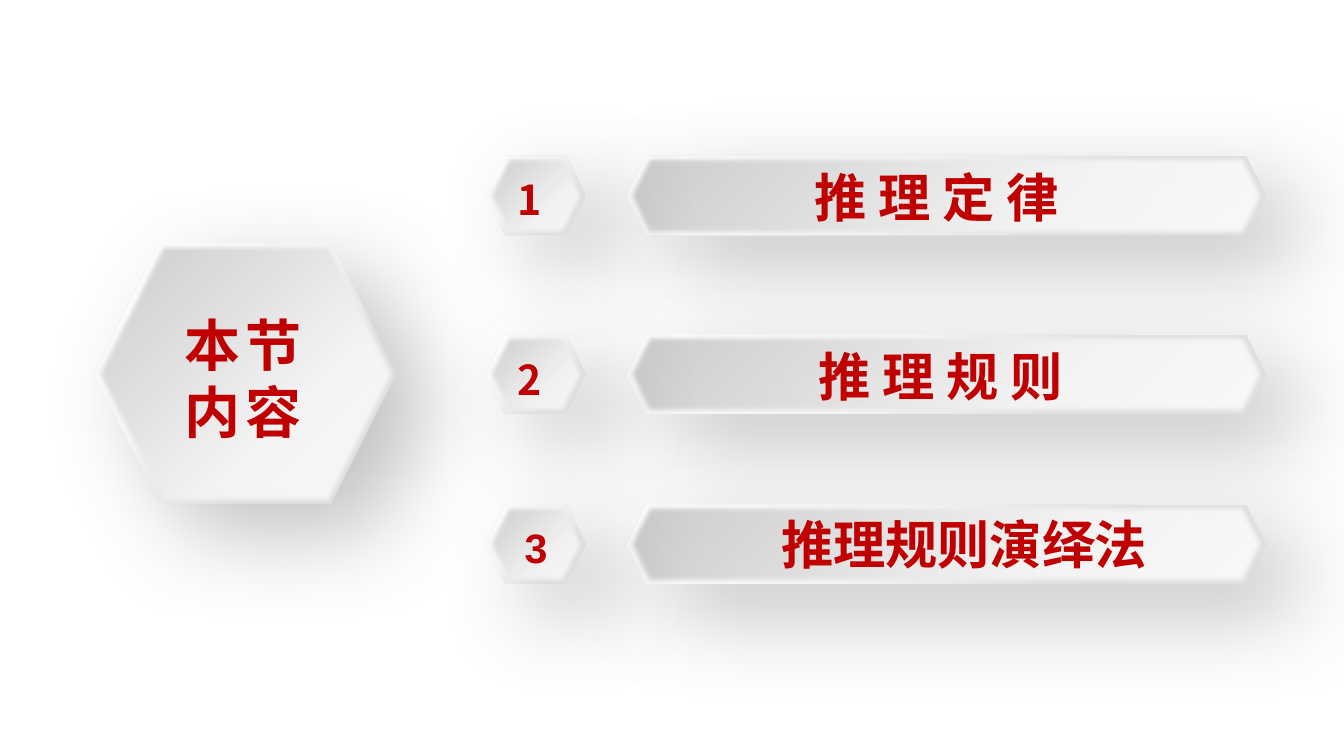
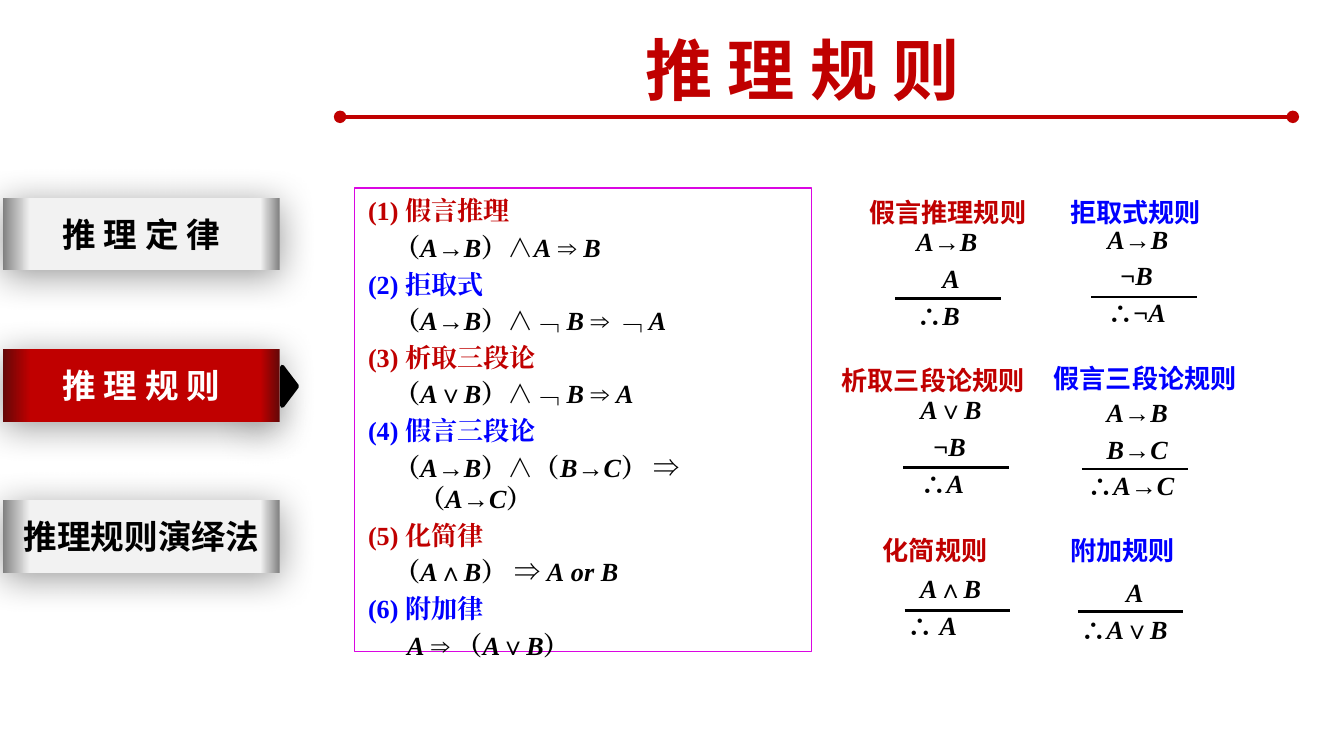
"""Build two slides on inference rules: a section overview and the rules themselves."""
import itertools

import lxml.etree
import pptx
import pptx.dml.color
import pptx.enum.shapes
import pptx.enum.text
import pptx.oxml.ns
import pptx.util

Pt = pptx.util.Pt
RGB = pptx.dml.color.RGBColor.from_string
SHAPE = pptx.enum.shapes.MSO_SHAPE
ANCHOR = pptx.enum.text.MSO_ANCHOR
ALIGN = pptx.enum.text.PP_ALIGN
FIT = pptx.enum.text.MSO_AUTO_SIZE.SHAPE_TO_FIT_TEXT
STRAIGHT = pptx.enum.shapes.MSO_CONNECTOR.STRAIGHT
qn = pptx.oxml.ns.qn
Sub = lxml.etree.SubElement

COLORS = {
    "red": "C00000", "blue": "0000FF", "black": "000000", "white": "FFFFFF",
    "purple": "DA06E2", "hexagon shadow": "696969",
}
RIM = [(1, "DEDEDE"), (30, "E0E0E0"), (61, "F6F6F6"), (100, "FFFFFF")]
FACE = [(0, "CBCBCB"), (32, "DEDEDE"), (64, "F3F3F3"), (100, "F9F9F9")]
GREY_TAB = [(0, "808080"), (7, "F2F2F2"), (90, "F2F2F2"), (100, "808080")]
RED_TAB = [(0, "630808"), (7, "C00000"), (90, "C00000"), (100, "630808")]
SANS, SERIF = "Noto Sans CJK SC", "Times New Roman"
TOPICS = ["推 理 定 律", "推 理 规 则", "推理规则演绎法"]


def format_runs(paragraph, size, color, font=SANS):
    """Make every run bold in one size, colour and font."""
    for run in paragraph.runs:
        run.font.size, run.font.bold, run.font.name = Pt(size), True, font
        run.font.color.rgb = RGB(COLORS[color])
        Sub(run.font._element, qn("a:ea")).set("typeface", font)


def paint(shape, stops, angle, shadow=None, soft_edge=0):
    """Give a shape a gradient, no outline, and an optional shadow or soft edge."""
    shape.line.fill.background()
    shape.shadow.inherit = False
    if stops:
        shape.fill.gradient()
        shape.fill.gradient_angle = 360 - angle
        stop_list = shape._element.spPr.find(qn("a:gradFill")).find(qn("a:gsLst"))
        stop_list.clear()
        for position, color in stops:
            stop = Sub(stop_list, qn("a:gs"), pos=str(position * 1000))
            Sub(stop, qn("a:srgbClr"), val=color)
    effects = shape._element.spPr.find(qn("a:effectLst"))
    if shadow:
        color, blur, distance, direction = shadow
        outer = Sub(effects, qn("a:outerShdw"), blurRad=str(Pt(blur)), dist=str(Pt(distance)),
                    dir=str(direction * 60000), algn="ctr", rotWithShape="0")
        tint = Sub(outer, qn("a:srgbClr"), val=COLORS[color])
        Sub(tint, qn("a:alpha"), val="40000")
    if soft_edge:
        Sub(effects, qn("a:softEdge"), rad=str(Pt(soft_edge)))


deck = pptx.Presentation()
deck.slide_width, deck.slide_height = Pt(720), Pt(405)
title_only = deck.slide_layouts[5]
overview = deck.slides.add_slide(title_only)
rules = deck.slides.add_slide(title_only)

row_tops = [83.5, 179.3, 270.4]
hexagons = [(50.4, 130.3, 162, 139.7)]
for top in row_tops:
    hexagons += [(335.5, top, 342.7, 42.5), (260, top, 54, 42.5)]
for box in hexagons:
    rim = overview.shapes.add_shape(SHAPE.HEXAGON, *map(Pt, box))
    paint(rim, RIM, 225, ("hexagon shadow", 49, 25, 40))
    face = overview.shapes.add_shape(SHAPE.HEXAGON, *map(Pt, box))
    paint(face, FACE, 45, soft_edge=2.5)

overview_labels = [
    (TOPICS[0], 436.3, 88.6, 175.7, 28, SANS),
    (TOPICS[1], 438.5, 184.3, 155.5, 28, SANS),
    (TOPICS[2], 418.5, 274.3, 200, 28, SANS),
    ("1", 277, 93.6, 34, 22, SANS),
    ("2", 277, 190, 34, 22, SANS),
    ("3", 281, 280, 34, 22, "Arial"),
]
for text, left, top, width, size, font in overview_labels:
    frame = overview.shapes.add_textbox(Pt(left), Pt(top), Pt(width), Pt(size * 1.2)).text_frame
    frame.margin_left = frame.margin_top = frame.margin_right = frame.margin_bottom = 0
    frame.word_wrap, frame.auto_size = True, FIT
    frame.text = text
    format_runs(frame.paragraphs[0], size, "red", font)

headings = [
    (overview, "本节\n内容", (91.4, 162.7, 81.4, 79.9), 30),
    (rules, TOPICS[1], (338.4, 11.5, 237.6, 51.1), 36),
]
for slide, text, box, size in headings:
    title = slide.shapes.title
    title.left, title.top, title.width, title.height = map(Pt, box)
    frame = title.text_frame
    frame.text = text
    frame.vertical_anchor, frame.auto_size = ANCHOR.TOP, FIT
    frame.word_wrap = slide is rules
    for paragraph in frame.paragraphs:
        paragraph.alignment = ALIGN.LEFT
        format_runs(paragraph, size, "red")
        if slide is overview:
            paragraph.runs[0].font._element.set("spc", "300")
    slide.shapes._spTree.append(title._element)

pointer = rules.shapes.add_shape(SHAPE.ISOSCELES_TRIANGLE, Pt(144.7), Pt(203), Pt(20.9), Pt(7.9))
pointer.rotation = 90
paint(pointer, None, 0, ("black", 22, 20, 135))
pointer.fill.solid()
pointer.fill.fore_color.rgb = pointer.line.color.rgb = RGB(COLORS["black"])
pointer.line.width = Pt(2.25)

for index, topic in enumerate(TOPICS):
    current = index == 1
    tab = rules.shapes.add_shape(SHAPE.RECTANGLE, Pt(1.4), Pt(106 + 81 * index), Pt(148.5), Pt(38.9))
    paint(tab, RED_TAB if current else GREY_TAB, 180, ("black", 20, 3, 90))
    tab.text_frame.text = topic
    tab.text_frame.vertical_anchor = ANCHOR.MIDDLE
    tab.text_frame.paragraphs[0].alignment = ALIGN.CENTER
    format_runs(tab.text_frame.paragraphs[0], 18, "white" if current else "black")

law_box = rules.shapes.add_shape(SHAPE.RECTANGLE, Pt(190.1), Pt(100.8), Pt(244.8), Pt(248.4))
paint(law_box, None, 0)
law_box.fill.background()
law_box.line.color.rgb = RGB(COLORS["purple"])
law_box.line.width = Pt(0.75)
law_box.text_frame.vertical_anchor = ANCHOR.TOP
laws = [
    ("(1) 假言推理", "（A→B）∧A ⇒ B"),
    ("(2) 拒取式", "（A→B）∧﹁ B ⇒ ﹁ A"),
    ("(3) 析取三段论", "（A∨B）∧﹁ B ⇒ A"),
    ("(4) 假言三段论", "（A→B）∧（B→C） ⇒ （A→C）"),
    ("(5) 化简律", "（A∧B） ⇒ A or B"),
    ("(6) 附加律", "A ⇒ （A∨B）"),
]
texts = []
for index, (name, formula) in enumerate(laws):
    texts += [(law_box.text_frame, name, "blue" if index % 2 else "red", 0, 0),
              (law_box.text_frame, formula, "black", 27.4, -6.4 if index == 5 else -13.4)]

rule_blocks = [
    ("假言推理规则", (458.6, 101.5), (483.8, 117.4), (479.5, 159.8), [("A→B", 0), ("A", 14), ("∴B", 0)]),
    ("拒取式规则", (566.2, 101.5), (586.1, 115.9), (584.6, 159.1), [("A→B", 0), ("¬B", 7), ("∴¬A", 0)]),
    ("析取三段论规则", (443.8, 191.5), (486, 207.4), (483.8, 250.6), [("A∨B", 0), ("¬B", 7), ("∴A", 0)]),
    ("假言三段论规则", (557.3, 190.8), (575.3, 208.8), (579.6, 251.3),
     [("A→B", 10.5), ("B→C", 10.5), ("∴A→C", 0)]),
    ("化简规则", (465.8, 283), (478.8, 303.1), (484.6, 327.2), [("A∧B", 7), ("∴ A", 0)]),
    ("附加规则", (566.2, 283), (571.7, 305.3), (577.4, 327.6), [("A", 24.5), ("∴A∨B", 0)]),
]
for index, (name, name_at, steps_at, bar_at, steps) in enumerate(rule_blocks):
    label = rules.shapes.add_textbox(*map(Pt, name_at), Pt(126), Pt(24.5)).text_frame
    label.word_wrap, label.auto_size = True, FIT
    label.text = name
    format_runs(label.paragraphs[0], 14, "blue" if index % 2 else "red")
    proof = rules.shapes.add_textbox(*map(Pt, steps_at), Pt(95), Pt(4.8 + 20 * len(steps))).text_frame
    proof.word_wrap, proof.auto_size = True, FIT
    texts += [(proof, step, "black", margin, 0) for step, margin in steps]

for frame, text, color, margin, indent in texts:
    first = not frame.text
    paragraph = frame.paragraphs[0] if first else frame.add_paragraph()
    paragraph.alignment = ALIGN.LEFT
    if not first:
        paragraph.space_before = Pt(2.8)
    properties = paragraph._p.get_or_add_pPr()
    properties.set("marL", str(Pt(margin)))
    properties.set("indent", str(Pt(indent)))
    for is_variable, part in itertools.groupby(text, lambda letter: letter in "ABCor"):
        run = paragraph.add_run()
        run.text = "".join(part)
        run.font.italic = is_variable
    format_runs(paragraph, 14, color, SERIF)

bars = [(*block[3], 56.6, "black", 1.5) for block in rule_blocks]
bars.append((182.2, 62.6, 510.4, "red", 2.25))
for left, top, length, color, weight in bars:
    bar = rules.shapes.add_connector(STRAIGHT, Pt(left), Pt(top), Pt(left + length), Pt(top))
    bar.line.color.rgb = RGB(COLORS[color])
    bar.line.width = Pt(weight)
    Sub(bar._element.spPr, qn("a:effectLst"))
    if color == "red":
        for end in ("a:headEnd", "a:tailEnd"):
            Sub(bar.line._ln, qn(end), type="oval")

deck.save("out.pptx")
